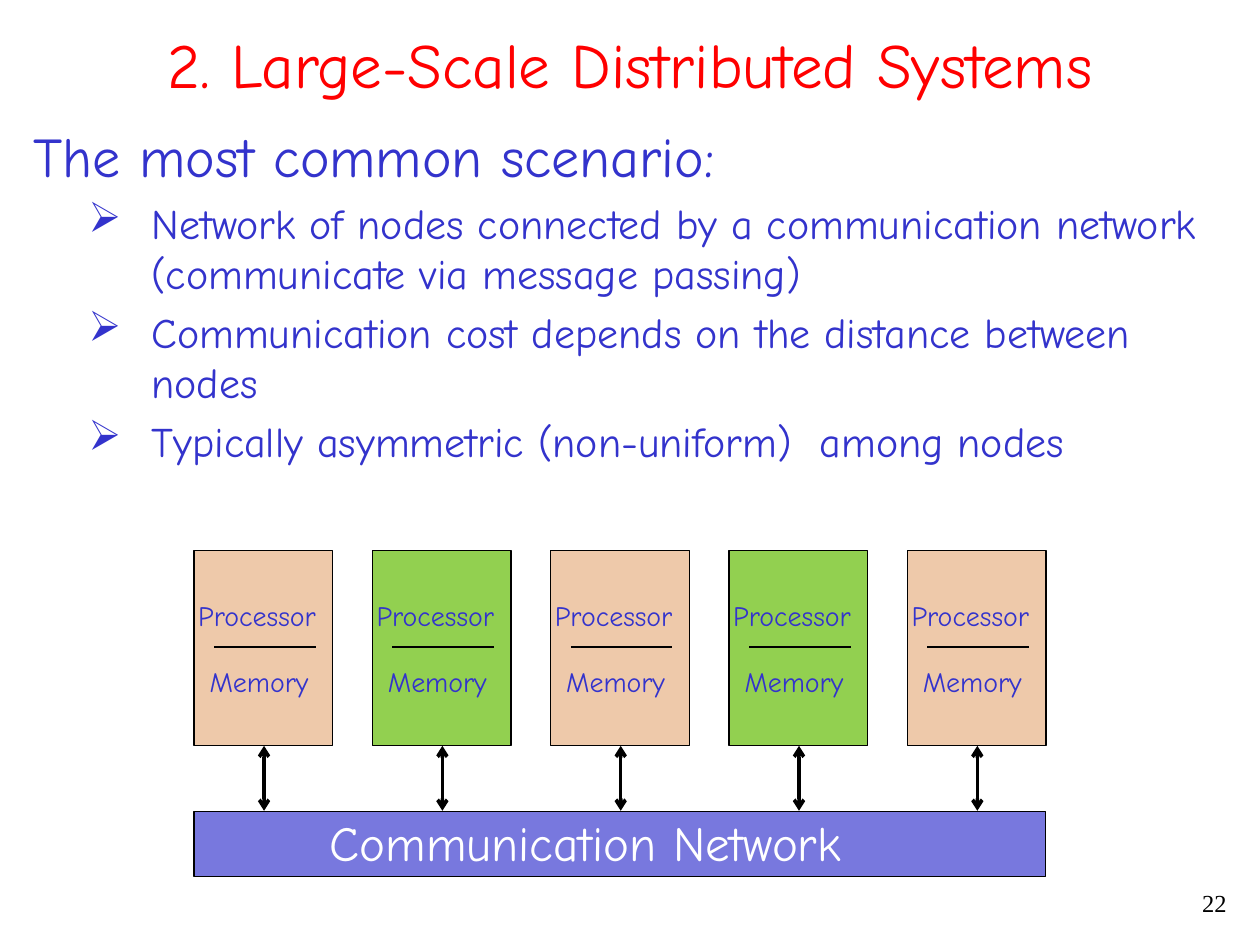
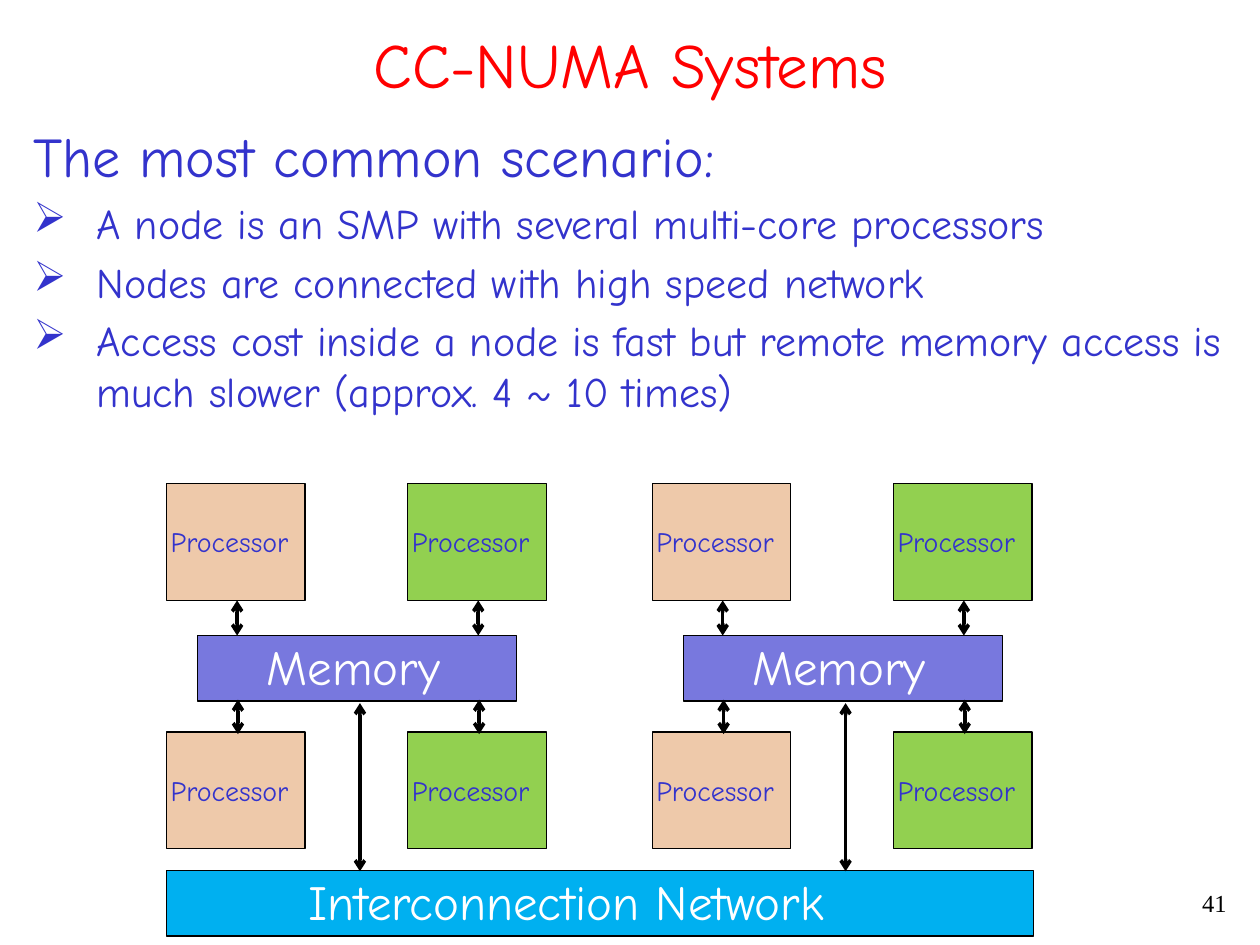
"""Build two slides on distributed memory and CC-NUMA systems."""
from dataclasses import dataclass

from lxml.etree import SubElement
from pptx import Presentation
from pptx.dml.color import RGBColor
from pptx.enum.shapes import MSO_CONNECTOR, MSO_SHAPE
from pptx.enum.text import MSO_ANCHOR, MSO_AUTO_SIZE, PP_ALIGN
from pptx.oxml.ns import qn
from pptx.util import Pt


@dataclass(frozen=True)
class Theme:
    """Colours, fonts and type sizes."""
    title: str = "FF0000"
    body: str = "3333CC"
    ink: str = "000000"
    white: str = "FFFFFF"
    tan: str = "EEC9AA"
    green: str = "92D050"
    violet: str = "7878DE"
    sky: str = "00B0F0"
    font: str = "Comic Neue"
    number_font: str = "Times New Roman"
    title_size: float = 36
    heading_size: float = 32
    band_size: float = 28
    bullet_size: float = 24
    label_size: float = 16
    number_size: float = 14
    outline: float = 0.75
    arrow: float = 2


class Deck:
    """Draw styled elements on the current slide."""

    def __init__(self, theme):
        self.theme = theme
        self.presentation = Presentation()
        self.presentation.slide_width = Pt(720)
        self.presentation.slide_height = Pt(540)
        self.slide = None

    def start(self, title, number):
        """Add a slide with its title and number."""
        theme = self.theme
        self.slide = self.presentation.slides.add_slide(self.presentation.slide_layouts[5])
        heading = self.slide.shapes.title
        heading.left, heading.top, heading.width, heading.height = Pt(12), Pt(12), Pt(696), Pt(48)
        frame = heading.text_frame
        frame.auto_size = MSO_AUTO_SIZE.NONE
        frame.vertical_anchor = MSO_ANCHOR.MIDDLE
        frame.text = title
        frame.paragraphs[0].alignment = PP_ALIGN.CENTER
        self.style(frame.paragraphs[0], theme.title_size, theme.title)
        page = self.text_frame(558, 504, 150, 24).paragraphs[0]
        page.text = number
        page.alignment = PP_ALIGN.RIGHT
        self.style(page, theme.number_size, theme.ink, theme.number_font)

    def style(self, paragraph, size, color, font=None):
        """Set the font of a paragraph."""
        paragraph.font.name = font or self.theme.font
        paragraph.font.size = Pt(size)
        paragraph.font.color.rgb = RGBColor.from_string(color)

    def text_frame(self, left, top, width, height):
        """Add a wrapping text box and return its frame."""
        box = self.slide.shapes.add_textbox(Pt(left), Pt(top), Pt(width), Pt(height))
        box.text_frame.word_wrap = True
        return box.text_frame

    def body(self, heading, bullets, indent):
        """Add the heading and its bullet list."""
        theme = self.theme
        frame = self.text_frame(12, 66, 696, 432)
        for index, text in enumerate([heading, *bullets]):
            paragraph = frame.add_paragraph() if index else frame.paragraphs[0]
            paragraph.text = text
            size = theme.bullet_size if index else theme.heading_size
            margin, hanging = (indent, 36) if index else (27, 27)
            paragraph.space_before = Pt(size * 0.2)
            properties = paragraph._p.get_or_add_pPr()
            properties.set("marL", str(Pt(margin)))
            properties.set("indent", str(-Pt(hanging)))
            if index:
                SubElement(properties, qn("a:buChar")).set("char", "➢")
            self.style(paragraph, size, theme.body)

    def label(self, text, left, top, width=89.3, height=26.6, size=None, color=None):
        """Add a one-line label."""
        frame = self.text_frame(left, top, width, height)
        frame.auto_size = MSO_AUTO_SIZE.SHAPE_TO_FIT_TEXT
        paragraph = frame.paragraphs[0]
        paragraph.text = text
        self.style(paragraph, size or self.theme.label_size, color or self.theme.body)

    def block(self, left, top, width, height, fill):
        """Add an outlined rectangle."""
        block = self.slide.shapes.add_shape(
            MSO_SHAPE.RECTANGLE, Pt(left), Pt(top), Pt(width), Pt(height))
        block.shadow.inherit = False
        block.fill.solid()
        block.fill.fore_color.rgb = RGBColor.from_string(fill)
        block.line.color.rgb = RGBColor.from_string(self.theme.ink)
        block.line.width = Pt(self.theme.outline)

    def band(self, text, left, top, width, fill, text_left, text_width):
        """Add a wide block with a large label."""
        self.block(left, top, width, 37.4, fill)
        self.label(text, text_left, top - 2.9, text_width, 41,
                   self.theme.band_size, self.theme.white)

    def line(self, x1, y1, x2, y2, width):
        """Add a plain straight line."""
        line = self.slide.shapes.add_connector(
            MSO_CONNECTOR.STRAIGHT, Pt(x1), Pt(y1), Pt(x2), Pt(y2))
        line.line.color.rgb = RGBColor.from_string(self.theme.ink)
        line.line.width = Pt(width)
        SubElement(line._element.spPr, qn("a:effectLst"))
        return line

    def link(self, x, top, bottom):
        """Add a vertical double-headed arrow."""
        outline = self.line(x, top, x, bottom, self.theme.arrow).line._get_or_add_ln()
        for end in ("a:headEnd", "a:tailEnd"):
            SubElement(outline, qn(end)).set("type", "arrow")


def distributed_slide(deck):
    """Draw five nodes on one communication network."""
    theme = deck.theme
    deck.start("2. Large-Scale Distributed Systems", "22")
    deck.body("The most common scenario:", [
        "Network of nodes connected by a communication network "
        "(communicate via message passing)",
        "Communication cost depends on the distance between nodes",
        "Typically asymmetric (non-uniform)  among nodes",
    ], 67.5)
    deck.band("Communication Network", 110.9, 463.7, 486.7, theme.violet, 181.4, 381)
    for index in range(5):
        node = 110.9 + index * 101.9
        deck.block(node, 314.6, 79.2, 111.6, theme.green if index % 2 else theme.tan)
        deck.label("Processor", node - 4.7, 338.4)
        deck.label("Memory", node + 1.8, 376.4)
        deck.line(node + 11.5, 369.8, node + 69.5, 369.8, theme.outline)
        deck.link(node + 40, 426.2, 463.3)


def numa_slide(deck):
    """Draw two SMP nodes on one interconnection network."""
    theme = deck.theme
    deck.start("CC-NUMA Systems", "41")
    deck.body("The most common scenario:", [
        "A node is an SMP with several multi-core processors",
        "Nodes are connected with high speed network",
        "Access cost inside a node is fast but remote memory access is "
        "much slower (approx. 4 ~ 10 times)",
    ], 36)
    deck.band("Interconnection Network", 95, 497.5, 495.4, theme.sky, 169.2, 360)
    for node in (95.2, 372.7):
        deck.band("Memory", node + 17.8, 363.2, 182.2, theme.violet, node + 50.2, 122)
        for processor, fill in ((node, theme.tan), (node + 137.8, theme.green)):
            for top in (276.4, 418.3):
                deck.block(processor, top, 79.2, 66.6, fill)
                deck.label("Processor", processor - 4.7, top + 20)
            deck.link(processor + 40.3, 343.1, 363.2)
            deck.link(processor + 40.8, 399.8, 419.5)
        deck.link(node + 110.5, 401.8, 497.9)


def main():
    """Build and save the deck."""
    deck = Deck(Theme())
    distributed_slide(deck)
    numa_slide(deck)
    deck.presentation.save("out.pptx")


if __name__ == "__main__":
    main()
